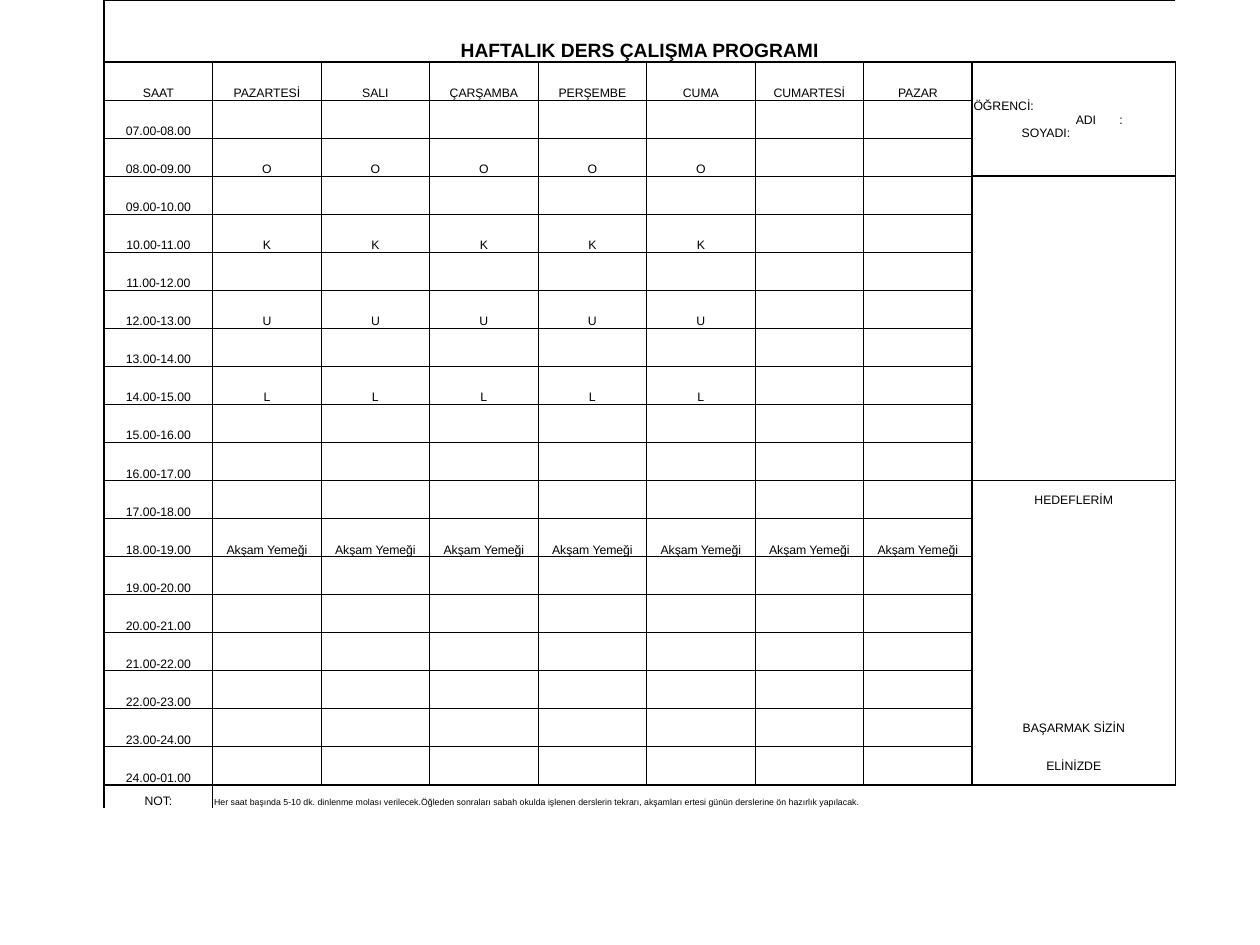
from dataclasses import dataclass

from lxml.etree import SubElement
from pptx import Presentation
from pptx.dml.color import RGBColor
from pptx.enum.text import MSO_ANCHOR, PP_ALIGN
from pptx.oxml.ns import qn
from pptx.util import Cm, Pt

WEEKDAYS = ["PAZARTESİ", "SALI", "ÇARŞAMBA", "PERŞEMBE", "CUMA"]
DAYS = WEEKDAYS + ["CUMARTESİ", "PAZAR"]
HOURS = range(7, 25)
SCHOOL_LETTERS = {8: "O", 10: "K", 12: "U", 14: "L"}
DINNER_HOUR = 18
STUDENT = "ÖĞRENCİ:\n\tADI\t:\n\tSOYADI:"
STUDENT_TABS = [[], [2.06, 2.94], [0.97]]
NOTE = (
    "Her saat başında 5-10 dk. dinlenme molası verilecek."
    "Öğleden sonraları sabah okulda işlenen derslerin tekrarı, "
    "akşamları ertesi günün derslerine ön hazırlık yapılacak."
)

HEADER_ROW = 1
FIRST_HOUR_ROW = 2
NOTE_ROW = FIRST_HOUR_ROW + len(HOURS)
SIDE_COLUMN = len(DAYS) + 1
ROW_COUNT = NOTE_ROW + 1
COLUMN_COUNT = SIDE_COLUMN + 1


@dataclass(frozen=True)
class Theme:
    font: str = "Arial"
    ink: str = "000000"
    title_size: int = 11
    body_size: int = 7
    note_size: int = 5
    bold_line: float = 1
    thin_line: float = 0.5
    inset: float = 0.03


class Timetable:
    def __init__(self, slide, theme):
        self.slide = slide
        self.theme = theme

    def add_grid(self, left, top, widths, heights):
        frame = self.slide.shapes.add_table(
            len(heights), len(widths), Cm(left), Cm(top),
            Cm(sum(widths)), Cm(sum(heights)),
        )
        self.grid = frame.table
        self.grid.first_row = False
        self.grid.horz_banding = False
        for column, width in zip(self.grid.columns, widths):
            column.width = Cm(width)
        for row, height in zip(self.grid.rows, heights):
            row.height = Cm(height)
        for row in range(len(heights)):
            for column in range(len(widths)):
                self.rule_cell(row, column)
                self.set_entry(row, column, "")

    def vertical_line(self, row, edge):
        bold_edges = {0: (0, COLUMN_COUNT), NOTE_ROW: (0, 1)}
        if row in bold_edges:
            return self.theme.bold_line if edge in bold_edges[row] else None
        if edge in (0, 1, SIDE_COLUMN, COLUMN_COUNT):
            return self.theme.bold_line
        return self.theme.thin_line

    def horizontal_line(self, column, edge):
        if edge == ROW_COUNT:
            return None
        if edge in (0, HEADER_ROW, NOTE_ROW):
            return self.theme.bold_line
        if column == SIDE_COLUMN:
            return self.theme.bold_line if edge in (4, 12) else None
        return self.theme.thin_line

    def rule_cell(self, row, column):
        cell = self.grid.cell(row, column)
        properties = cell._tc.get_or_add_tcPr()
        lines = {
            "a:lnL": self.vertical_line(row, column),
            "a:lnR": self.vertical_line(row, column + 1),
            "a:lnT": self.horizontal_line(column, row),
            "a:lnB": self.horizontal_line(column, row + 1),
        }
        for tag, weight in lines.items():
            line = SubElement(properties, qn(tag), w=str(int(Pt(weight or 0))))
            if weight is None:
                SubElement(line, qn("a:noFill"))
            else:
                fill = SubElement(line, qn("a:solidFill"))
                SubElement(fill, qn("a:srgbClr"), val=self.theme.ink)
        cell.fill.background()
        cell.margin_left = cell.margin_right = cell.margin_top = Cm(self.theme.inset)
        cell.margin_bottom = 0

    def set_entry(self, row, column, text, size=None, bold=False,
                  align=PP_ALIGN.CENTER, anchor=MSO_ANCHOR.BOTTOM):
        size = size or self.theme.body_size
        cell = self.grid.cell(row, column)
        cell.vertical_anchor = anchor
        cell.text_frame.text = text
        for paragraph in cell.text_frame.paragraphs:
            paragraph.alignment = align
            for run in paragraph.runs:
                run.font.name = self.theme.font
                run.font.size = Pt(size)
                run.font.bold = bold
                run.font.color.rgb = RGBColor.from_string(self.theme.ink)
            if not paragraph.runs:
                SubElement(paragraph._p, qn("a:endParaRPr"), sz=str(size * 100))
        return cell

    def merge(self, first, last):
        self.grid.cell(*first).merge(self.grid.cell(*last))

    def set_tabs(self, cell, stops_by_line):
        for paragraph, stops in zip(cell.text_frame.paragraphs, stops_by_line):
            if stops:
                tabs = SubElement(paragraph._p.get_or_add_pPr(), qn("a:tabLst"))
                for stop in stops:
                    SubElement(tabs, qn("a:tab"), pos=str(int(Cm(stop))), algn="l")


def day_entries(hour):
    if hour == DINNER_HOUR:
        return ["Akşam Yemeği"] * len(DAYS)
    if hour in SCHOOL_LETTERS:
        return [SCHOOL_LETTERS[hour]] * len(WEEKDAYS)
    return []


def main():
    presentation = Presentation()
    presentation.slide_width = Cm(25.4)
    presentation.slide_height = Cm(19.05)
    slide = presentation.slides.add_slide(presentation.slide_layouts[6])
    theme = Theme()
    timetable = Timetable(slide, theme)

    day_width = 17.5 / SIDE_COLUMN
    hour_height = 14.59 / (len(HOURS) + 1)
    timetable.add_grid(
        2.1, 0,
        [day_width] * SIDE_COLUMN + [4.1],
        [1.25] + [hour_height] * (len(HOURS) + 1) + [0.46],
    )

    timetable.merge((0, 0), (0, SIDE_COLUMN))
    timetable.merge((NOTE_ROW, 1), (NOTE_ROW, SIDE_COLUMN))
    for first, last in [(1, 3), (4, 11), (13, 17)]:
        timetable.merge((first, SIDE_COLUMN), (last, SIDE_COLUMN))

    timetable.set_entry(0, 0, "HAFTALIK DERS ÇALIŞMA PROGRAMI", theme.title_size, bold=True)
    for column, heading in enumerate(["SAAT"] + DAYS):
        timetable.set_entry(HEADER_ROW, column, heading)
    for row, hour in enumerate(HOURS, FIRST_HOUR_ROW):
        timetable.set_entry(row, 0, f"{hour:02}.00-{hour % 24 + 1:02}.00")
        for column, entry in enumerate(day_entries(hour), 1):
            timetable.set_entry(row, column, entry)

    student = timetable.set_entry(HEADER_ROW, SIDE_COLUMN, STUDENT,
                                  align=PP_ALIGN.LEFT, anchor=MSO_ANCHOR.MIDDLE)
    timetable.set_tabs(student, STUDENT_TABS)
    for row, motto in {12: "HEDEFLERİM", 18: "BAŞARMAK SİZİN", 19: "ELİNİZDE"}.items():
        timetable.set_entry(row, SIDE_COLUMN, motto, anchor=MSO_ANCHOR.MIDDLE)

    timetable.set_entry(NOTE_ROW, 0, "NOT:")
    timetable.set_entry(NOTE_ROW, 1, NOTE, theme.note_size, align=PP_ALIGN.LEFT)
    presentation.save("out.pptx")


if __name__ == "__main__":
    main()
